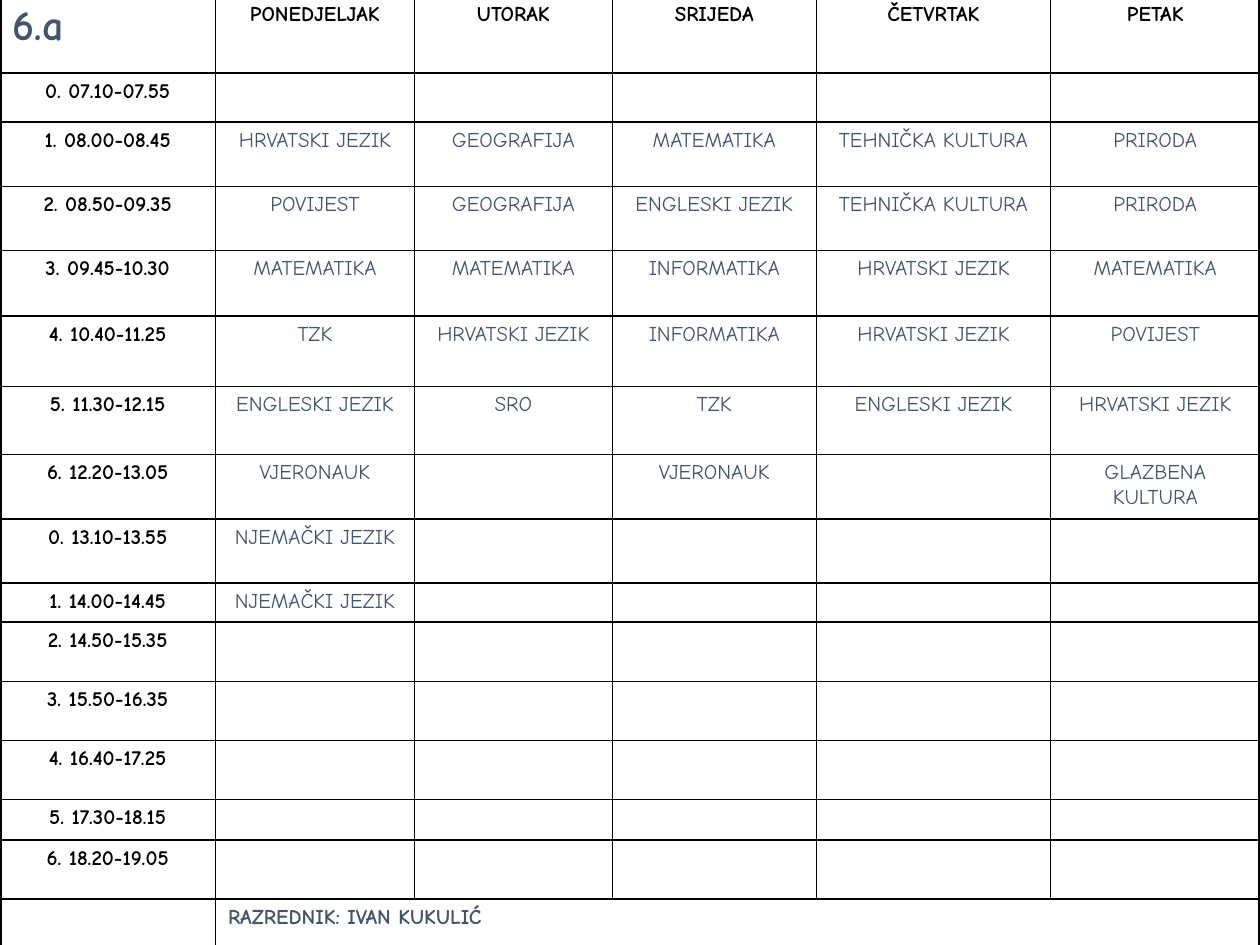
from dataclasses import dataclass

from lxml import etree
from pptx import Presentation
from pptx.dml.color import RGBColor
from pptx.enum.text import PP_ALIGN
from pptx.oxml.ns import qn
from pptx.table import Table, _Cell
from pptx.util import Inches, Pt

LEFT, CENTER = PP_ALIGN.LEFT, PP_ALIGN.CENTER
FONT = "Comic Neue"
BLACK, SLATE = "000000", "44546A"
NO_STYLE_NO_GRID = "{2D5ABB26-0587-4C30-8999-92F81FD0307C}"
THIN, THICK = 1, 2.25

COLUMN_WIDTHS = [1.71, 1.58, 1.57, 1.62, 1.86, 1.66]
DAYS = ["PONEDJELJAK", "UTORAK", "SRIJEDA", "ČETVRTAK", "PETAK"]
HEADER_HEIGHT, FOOTER_HEIGHT = 0.61, 0.39


@dataclass(frozen=True)
class TextFormat:
    color: str
    bold: bool = True
    size: float = 12
    alignment: PP_ALIGN = CENTER


CLASS_NAME = TextFormat(SLATE, size=24, alignment=LEFT)
HEADING = TextFormat(BLACK)
SUBJECT = TextFormat(SLATE, bold=False)
TEACHER = TextFormat(SLATE, alignment=LEFT)


@dataclass(frozen=True)
class Lesson:
    time: str
    height: float
    subjects: tuple[str, ...] = ()


LESSONS = [
    Lesson("0. 07.10-07.55", 0.39),
    Lesson("1. 08.00-08.45", 0.51, (
        "HRVATSKI JEZIK", "GEOGRAFIJA", "MATEMATIKA", "TEHNIČKA KULTURA", "PRIRODA")),
    Lesson("2. 08.50-09.35", 0.51, (
        "POVIJEST", "GEOGRAFIJA", "ENGLESKI JEZIK", "TEHNIČKA KULTURA", "PRIRODA")),
    Lesson("3. 09.45-10.30", 0.52, (
        "MATEMATIKA", "MATEMATIKA", "INFORMATIKA", "HRVATSKI JEZIK", "MATEMATIKA")),
    Lesson("4. 10.40-11.25", 0.56, (
        "TZK", "HRVATSKI JEZIK", "INFORMATIKA", "HRVATSKI JEZIK", "POVIJEST")),
    Lesson("5. 11.30-12.15", 0.54, (
        "ENGLESKI JEZIK", "SRO", "TZK", "ENGLESKI JEZIK", "HRVATSKI JEZIK")),
    Lesson("6. 12.20-13.05", 0.51, (
        "VJERONAUK", "", "VJERONAUK", "", "GLAZBENA KULTURA")),
    Lesson("0. 13.10-13.55", 0.51, ("NJEMAČKI JEZIK",)),
    Lesson("1. 14.00-14.45", 0.31, ("NJEMAČKI JEZIK",)),
    Lesson("2. 14.50-15.35", 0.47),
    Lesson("3. 15.50-16.35", 0.47),
    Lesson("4. 16.40-17.25", 0.47),
    Lesson("5. 17.30-18.15", 0.32),
    Lesson("6. 18.20-19.05", 0.47),
]


def rgb(color: str) -> RGBColor:
    return RGBColor.from_string(color)


def write_cell(cell: _Cell, text: str, text_format: TextFormat) -> None:
    paragraph = cell.text_frame.paragraphs[0]
    paragraph.alignment = text_format.alignment
    if not text:
        # The end mark sets the line height of an empty cell.
        end_mark = etree.SubElement(paragraph._p, qn("a:endParaRPr"))
        end_mark.set("sz", str(int(text_format.size * 100)))
        return
    run = paragraph.add_run()
    run.text = text
    values = {"name": FONT, "size": Pt(text_format.size), "bold": text_format.bold}
    for name, value in values.items():
        setattr(run.font, name, value)
    run.font.color.rgb = rgb(text_format.color)


def add_border(cell: _Cell, side: str, width: float) -> None:
    line = etree.SubElement(cell._tc.get_or_add_tcPr(), qn(f"a:ln{side}"), w=str(Pt(width)))
    fill = etree.SubElement(line, qn("a:solidFill"))
    etree.SubElement(fill, qn("a:srgbClr"), val=BLACK)


def draw_grid(table: Table) -> None:
    """Give every cell thin borders, and thick ones along the table's edge."""
    last_row, last_column = len(table.rows) - 1, len(table.columns) - 1
    for row in range(last_row + 1):
        for column in range(last_column + 1):
            cell = table.cell(row, column)
            if cell.is_spanned:
                continue
            right_column = column + cell.span_width - 1
            on_edge = {
                "L": column == 0,
                "R": right_column == last_column,
                "T": row == 0,
                "B": row == last_row,
            }
            for side, is_edge in on_edge.items():
                add_border(cell, side, THICK if is_edge else THIN)
            cell.fill.background()


def add_timetable(slide) -> None:
    heights = [HEADER_HEIGHT, *(lesson.height for lesson in LESSONS), FOOTER_HEIGHT]
    frame = slide.shapes.add_table(
        len(heights), len(COLUMN_WIDTHS),
        Inches(0), Inches(-0.03), Inches(10), Inches(sum(heights)),
    )
    table = frame.table
    table.first_row = table.horz_banding = False
    table._tbl.tblPr.find(qn("a:tableStyleId")).text = NO_STYLE_NO_GRID
    for column, width in zip(table.columns, COLUMN_WIDTHS):
        column.width = Inches(width)
    for row, height in zip(table.rows, heights):
        row.height = Inches(height)

    write_cell(table.cell(0, 0), "6.a", CLASS_NAME)
    for column, day in enumerate(DAYS, start=1):
        write_cell(table.cell(0, column), day, HEADING)
    for row, lesson in enumerate(LESSONS, start=1):
        write_cell(table.cell(row, 0), lesson.time, HEADING)
        free_days = ("",) * (len(DAYS) - len(lesson.subjects))
        for column, subject in enumerate(lesson.subjects + free_days, start=1):
            write_cell(table.cell(row, column), subject, SUBJECT)

    footer = len(heights) - 1
    write_cell(table.cell(footer, 0), "", HEADING)
    table.cell(footer, 1).merge(table.cell(footer, len(DAYS)))
    write_cell(table.cell(footer, 1), "RAZREDNIK: IVAN KUKULIĆ", TEACHER)
    draw_grid(table)


def main() -> None:
    presentation = Presentation()
    presentation.slide_width, presentation.slide_height = Inches(10), Inches(7.5)
    slide = presentation.slides.add_slide(presentation.slide_layouts.get_by_name("Blank"))
    add_timetable(slide)
    presentation.save("out.pptx")


if __name__ == "__main__":
    main()
